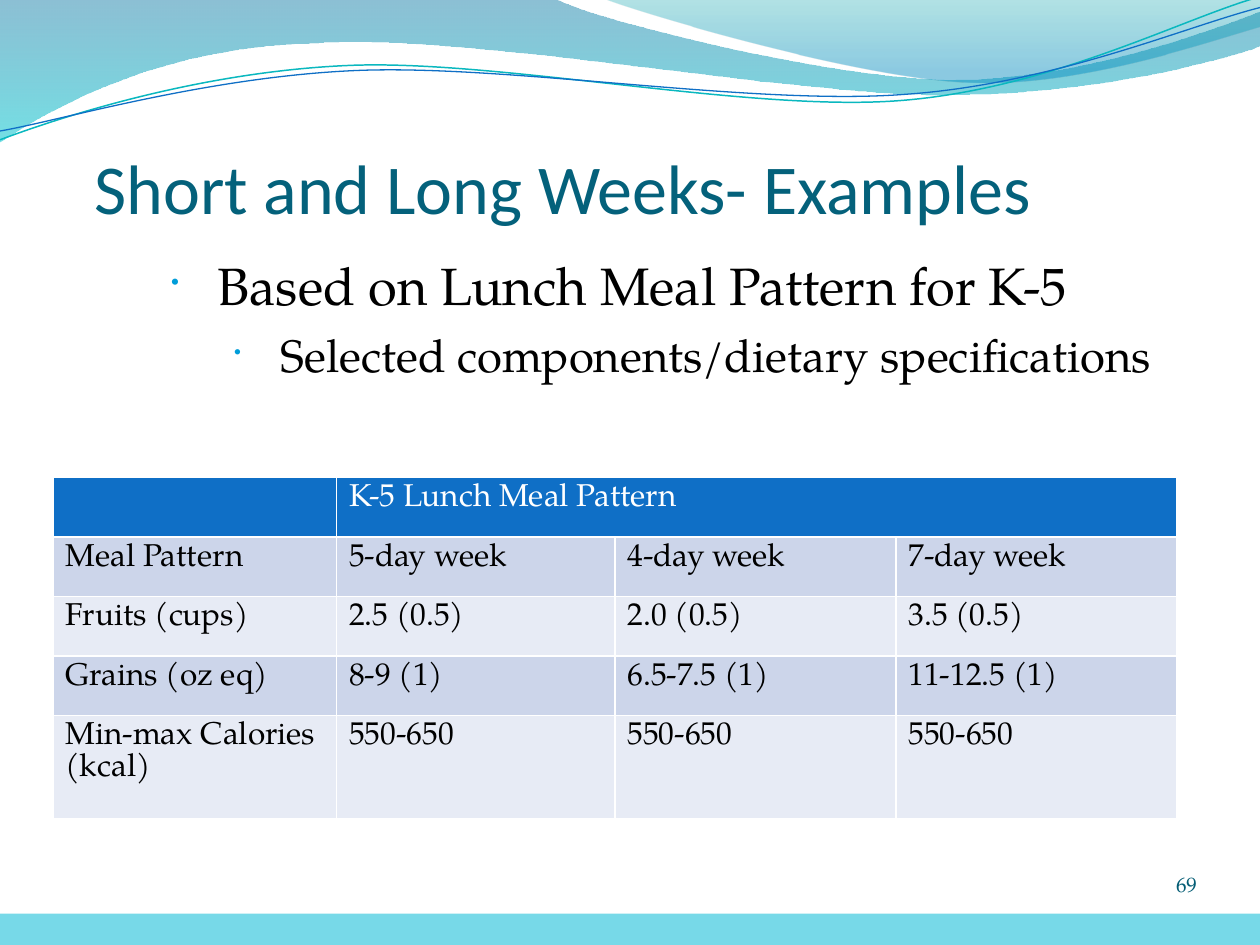
from lxml import etree
from pptx import Presentation
from pptx.dml.color import RGBColor
from pptx.enum.shapes import MSO_SHAPE
from pptx.enum.text import MSO_ANCHOR, MSO_AUTO_SIZE, PP_ALIGN
from pptx.oxml.ns import qn
from pptx.util import Inches, Pt

RECT = MSO_SHAPE.RECTANGLE
TOP, BOTTOM = MSO_ANCHOR.TOP, MSO_ANCHOR.BOTTOM
GROW = MSO_AUTO_SIZE.SHAPE_TO_FIT_TEXT
LEFT, RIGHT = PP_ALIGN.LEFT, PP_ALIGN.RIGHT
SERIF, SANS = "TeX Gyre Pagella", "Calibri"

# Each outline: start point, then lines (2 numbers) or Bezier curves (6 numbers)
WAVE_LEFT = [
    (0, 0), (4.4, -0.01), (4.76, 0.17, 6.64, 0.63, 7.58, 0.63),
    (8.53, 0.63, 9.58, 0.26, 10, 0.09), (10.01, 0.36),
    (9.83, 0.44, 8.7, 0.76, 7.46, 0.75), (6.22, 0.75, 3.82, 0.28, 2.57, 0.34),
    (1.29, 0.36, 0.46, 0.83, -0.01, 1.13), (0, 0),
]
WAVE_RIGHT = [
    (4.79, -0.01), (5.09, 0.11, 6.82, 0.62, 7.69, 0.65),
    (8.56, 0.69, 9.61, 0.32, 10, 0.21), (10, 0), (4.79, -0.01),
]
LINE_TEAL = [
    (0, 1.11), (0.48, 0.93, 1.58, 0.57, 2.77, 0.52),
    (3.95, 0.47, 5.93, 0.89, 7.13, 0.8), (8.33, 0.71, 9.38, 0.15, 9.98, -0.02),
]
LINE_BLUE = [
    (0, 1.04), (0.47, 0.96, 1.64, 0.61, 2.83, 0.56),
    (4.03, 0.51, 5.97, 0.84, 7.17, 0.75), (8.36, 0.67, 9.41, 0.21, 10, 0.06),
]

COLUMN_WIDTHS = [2.25, 2.21, 2.23, 2.23]
TABLE_HEIGHT, LAST_ROW_HEIGHT = 2.71, 0.82
MEAL_ROWS = [
    ["", "K-5 Lunch Meal Pattern", "", ""],
    ["Meal Pattern", "5-day week", "4-day week", "7-day week"],
    ["Fruits (cups)", "2.5 (0.5)", "2.0 (0.5)", "3.5 (0.5)"],
    ["Grains (oz eq)", "8-9 (1)", "6.5-7.5 (1)", "11-12.5 (1)"],
    ["Min-max Calories (kcal)", "550-650", "550-650", "550-650"],
]


def rgb(color):
    return RGBColor.from_string(color)


def sub(parent, tag, **attrs):
    return etree.SubElement(parent, qn(tag), {k: str(v) for k, v in attrs.items()})


def add_outline(s, outline, closed):
    """Build a freeform, joining each curve's three points into one Bezier."""
    (x, y), *segments = outline
    builder = s.shapes.build_freeform(Inches(x), Inches(y))
    points = [(Inches(seg[i]), Inches(seg[i + 1]))
              for seg in segments for i in range(0, len(seg), 2)]
    builder.add_line_segments(points, close=closed)
    sp = builder.convert_to_shape()
    sp.shadow.inherit = False
    steps = iter(list(sp.element.spPr.iter(qn("a:lnTo"))))
    for seg in segments:
        step = next(steps)
        if len(seg) == 6:
            step.addprevious(curve := etree.Element(qn("a:cubicBezTo")))
            for part in (step, next(steps), next(steps)):
                curve.append(part[0])
                part.getparent().remove(part)
    return sp


def add_wave(s, outline, stops):
    sp = add_outline(s, outline, True)
    sp.line.fill.background()
    sp.fill.gradient()
    sp.fill.gradient_angle = 270
    for stop, (position, color, _) in zip(sp.fill.gradient_stops, stops):
        stop.position = position
        stop.color.rgb = rgb(color)
    colors = sp.element.spPr.iter(qn("a:srgbClr"))
    for node, (_, _, alpha) in zip(colors, stops):
        sub(node, "a:alpha", val=alpha * 1000)


def add_wave_line(s, outline, color, width):
    sp = add_outline(s, outline, False)
    sp.fill.background()
    sp.line.color.rgb = rgb(color)
    sp.line.width = Pt(width)


def add_bar(s, x, y, w, h, color):
    sp = s.shapes.add_shape(RECT, Inches(x), Inches(y), Inches(w), Inches(h))
    sp.shadow.inherit = False
    sp.fill.solid()
    sp.fill.fore_color.rgb = rgb(color)
    sp.line.fill.background()


def add_textbox(s, x, y, w, h, insets=(0, 0, 0, 0), anchor=TOP):
    tf = s.shapes.add_textbox(Inches(x), Inches(y), Inches(w), Inches(h)).text_frame
    tf.word_wrap = True
    tf.vertical_anchor = anchor
    tf.margin_left, tf.margin_top, tf.margin_right, tf.margin_bottom = map(Inches, insets)
    return tf


def write(p, text, size=18, font=SERIF, color="000000", align=LEFT, level=0,
          margin=None, indent=None, before=None, spacing=None, bullet=None):
    p.alignment = align
    p.level = level
    if before is not None:
        p.space_before = Pt(before)
    if spacing is not None:
        p.line_spacing = spacing
    pPr = p._p.get_or_add_pPr()
    if margin is not None:
        pPr.set("marL", str(Inches(margin)))
        pPr.set("indent", str(Inches(indent)))
    if bullet:
        sub(sub(pPr, "a:buClr"), "a:srgbClr", val=bullet)
        sub(pPr, "a:buSzPct", val=45000)
        sub(pPr, "a:buChar", char="•")
    r = p.add_run()
    r.text = text
    r.font.size = Pt(size)
    r.font.name = font
    r.font.color.rgb = rgb(color)


def style_cell(cell, fill):
    tcPr = cell._tc.get_or_add_tcPr()
    for side in "LRTB":
        ln = sub(tcPr, f"a:ln{side}", w=Pt(1))
        sub(sub(ln, "a:solidFill"), "a:srgbClr", val="FFFFFF")
    cell.fill.solid()
    cell.fill.fore_color.rgb = rgb(fill)


def add_meal_table(s, x, y):
    last = len(MEAL_ROWS) - 1
    table = s.shapes.add_table(
        len(MEAL_ROWS), len(COLUMN_WIDTHS), Inches(x), Inches(y),
        Inches(sum(COLUMN_WIDTHS)), Inches(TABLE_HEIGHT)).table
    for column, width in zip(table.columns, COLUMN_WIDTHS):
        column.width = Inches(width)
    for i, values in enumerate(MEAL_ROWS):
        height = LAST_ROW_HEIGHT if i == last else (TABLE_HEIGHT - LAST_ROW_HEIGHT) / last
        table.rows[i].height = Inches(height)
        header = i == 0
        fill = "0F6FC6" if header else ("E7EBF5", "CCD5EA")[i % 2]
        for j, value in enumerate(values):
            cell = table.cell(i, j)
            style_cell(cell, fill)
            if value:
                write(cell.text_frame.paragraphs[0], value,
                      color="FFFFFF" if header else "000000")
    table.cell(0, 1).merge(table.cell(0, 3))


def main():
    prs = Presentation()
    prs.slide_width, prs.slide_height = Inches(10), Inches(7.5)
    s = prs.slides.add_slide(prs.slide_layouts[6])

    # Wave decoration
    add_wave(s, WAVE_LEFT, [(0, "0074A1", 45), (1, "00C6CF", 55)])
    add_wave(s, WAVE_RIGHT, [(0, "00A1A9", 30), (0.8, "008BBF", 45)])
    add_wave_line(s, LINE_TEAL, "0AB8BF", 0.85)
    add_wave_line(s, LINE_BLUE, "0F6FC6", 0.75)

    # Title
    tf = add_textbox(s, 0.25, 0.58, 10, 1.25, insets=(0, 0.09, 0, 0), anchor=BOTTOM)
    write(tf.paragraphs[0], "Short and Long Weeks- Examples", size=40, font=SANS,
          color="04617B", margin=0.73, indent=-0.23, spacing=0.93)

    # Bullets
    tf = add_textbox(s, 0.75, 1.96, 8.5, 1.13, insets=(0.1, 0.05, 0.1, 0.05))
    tf.auto_size = GROW
    write(tf.paragraphs[0], "Based on Lunch Meal Pattern for K-5", size=30,
          margin=0.88, indent=-0.37, before=6.4, bullet="009DD9")
    write(tf.add_paragraph(), "Selected components/dietary specifications", size=26,
          level=1, margin=1.38, indent=-0.37, before=6.4, bullet="009DD9")

    # Meal pattern table
    add_meal_table(s, 0.42, 3.79)

    # Footer bar and page number
    add_bar(s, 0, 7.25, 10, 0.25, "77D9E8")
    tf = add_textbox(s, 8.67, 6.92, 0.83, 0.42)
    write(tf.paragraphs[0], "69", size=12, color="045D75", align=RIGHT)

    prs.save("out.pptx")


if __name__ == "__main__":
    main()
